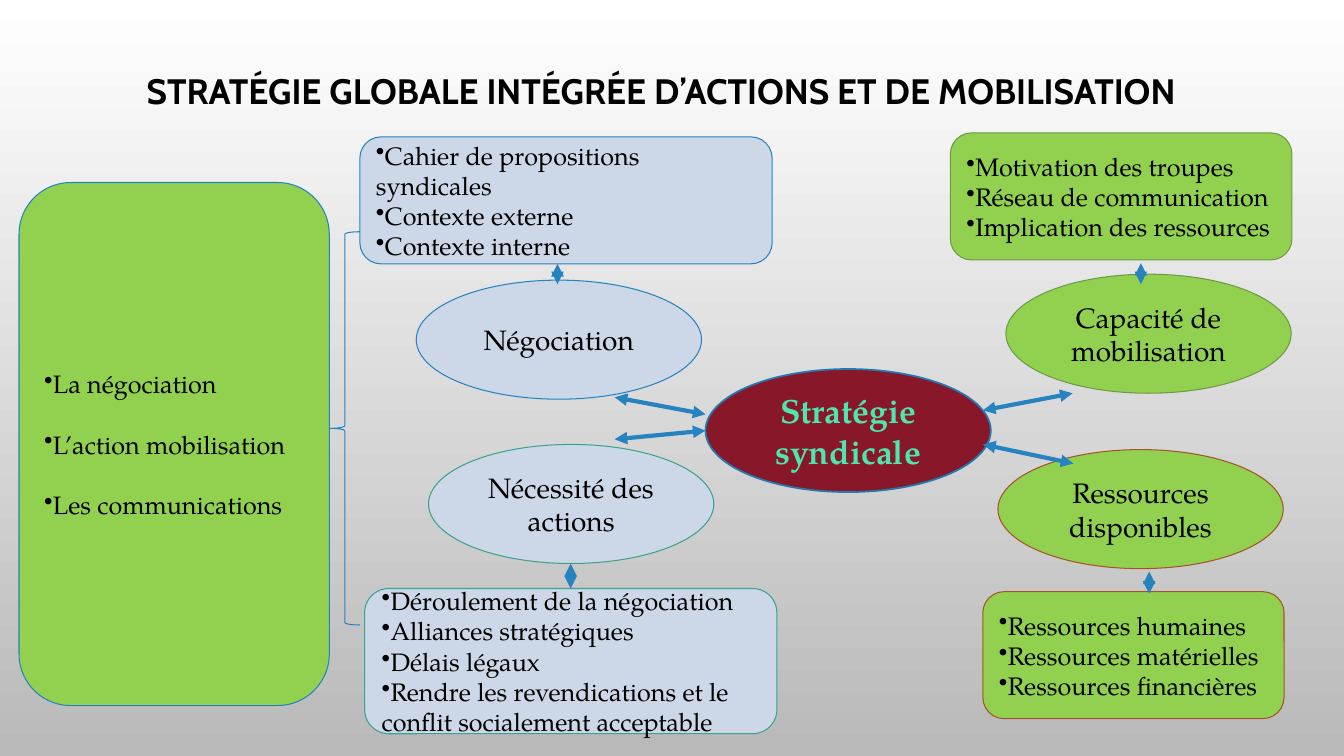
"""Build the slide on the integrated strategy of union action and mobilisation."""
import pptx
import pptx.util
import pptx.dml.color
import pptx.enum.shapes
import pptx.enum.text
import pptx.oxml
import pptx.oxml.ns
import lxml.etree

Cm = pptx.util.Cm
Pt = pptx.util.Pt
SHAPES = pptx.enum.shapes.MSO_SHAPE
ALIGN = pptx.enum.text.PP_ALIGN
MIDDLE = pptx.enum.text.MSO_ANCHOR.MIDDLE
SERIF = "TeX Gyre Pagella"
GREEN, PALE, CRIMSON, MINT = "92D050", "CCD8E7", "871729", "4DE6AD"
BLUE, DARK_BLUE, LEAF, TEAL, RUST = "2683BF", "2379B0", "6B9B46", "3CA28B", "A55229"


def colour(value):
    return pptx.dml.color.RGBColor.from_string(value)


def write(shape, lines, font, bulleted=False, gap=0):
    frame = shape.text_frame
    frame.word_wrap = True
    frame.vertical_anchor = MIDDLE
    for number, line in enumerate(lines):
        para = frame.add_paragraph() if number else frame.paragraphs[0]
        para.alignment = ALIGN.LEFT if bulleted else ALIGN.CENTER
        if number and gap:
            para.space_before = Pt(gap)
        if bulleted:
            bullet = lxml.etree.SubElement(
                para._p.get_or_add_pPr(), pptx.oxml.ns.qn("a:buChar"))
            bullet.set("char", "•")
        span = para.add_run()
        span.text = line
        span.font.color.rgb = colour(font.get("colour", "000000"))
        for name in ("name", "size", "bold"):
            setattr(span.font, name, font.get(name))


deck = pptx.Presentation()
deck.slide_width, deck.slide_height = Cm(33.87), Cm(19.05)
page = deck.slides.add_slide(deck.slide_layouts[6])
backdrop = page.background.fill
backdrop.gradient()
backdrop.gradient_angle = 270
for stop, shade in zip(backdrop.gradient_stops, ("FFFFFF", "B9B9B9")):
    stop.color.rgb = colour(shade)

title = page.shapes.add_textbox(Cm(2.06), Cm(1.14), Cm(29.21), Cm(2.39))
write(title, ["STRATÉGIE GLOBALE INTÉGRÉE D’ACTIONS ET DE MOBILISATION"],
      {"name": "Cabin", "size": Pt(25.2), "bold": True})
title.text_frame.paragraphs[0].line_spacing = 0.9

theme_font = {"name": SERIF, "size": Pt(20)}
core_font = {"name": SERIF, "size": Pt(24), "bold": True, "colour": MINT}
list_font = {"name": SERIF, "size": Pt(18)}

ellipses = [
    (17.78, 9.3, 3.1, CRIMSON, DARK_BLUE, 1.25, "Stratégie syndicale", core_font),
    (25.35, 6.91, 3, GREEN, LEAF, 0.75, "Capacité de mobilisation", theme_font),
    (10.8, 11.2, 3, PALE, TEAL, 0.75, "Nécessité des actions", theme_font),
    (25.15, 11.33, 3, GREEN, RUST, 0.75, "Ressources disponibles", theme_font),
    (10.49, 7.06, 3, PALE, BLUE, 0.75, "Négociation", theme_font),
]
for left, top, height, fill, outline, weight, label, font in ellipses:
    ellipse = page.shapes.add_shape(
        SHAPES.OVAL, Cm(left), Cm(top), Cm(7.19), Cm(height))
    ellipse.shadow.inherit = False
    ellipse.fill.solid()
    ellipse.fill.fore_color.rgb = colour(fill)
    ellipse.line.color.rgb = colour(outline)
    ellipse.line.width = Pt(weight)
    write(ellipse, [label], font)

boxes = [
    (23.95, 3.35, 8.61, 3.2, GREEN, LEAF, 0,
     ["Motivation des troupes", "Réseau de communication",
      "Implication des ressources"]),
    (9.19, 14.83, 10.39, 3.66, PALE, TEAL, 0,
     ["Déroulement de la négociation", "Alliances stratégiques", "Délais légaux",
      "Rendre les revendications et le conflit socialement acceptable"]),
    (24.77, 14.91, 7.59, 3.2, GREEN, RUST, 0,
     ["Ressources humaines", "Ressources matérielles", "Ressources financières"]),
    (9.07, 3.45, 10.39, 3.2, PALE, BLUE, 0,
     ["Cahier de propositions syndicales", "Contexte externe", "Contexte interne"]),
    (0.48, 4.6, 7.82, 13.18, GREEN, BLUE, 21.6,
     ["La négociation", "L’action mobilisation", "Les communications"]),
]
for left, top, width, height, fill, outline, gap, lines in boxes:
    box = page.shapes.add_shape(
        SHAPES.ROUNDED_RECTANGLE, Cm(left), Cm(top), Cm(width), Cm(height))
    box.shadow.inherit = False
    box.fill.solid()
    box.fill.fore_color.rgb = colour(fill)
    box.line.color.rgb = colour(outline)
    box.line.width = Pt(0.75)
    write(box, lines, list_font, bulleted=True, gap=gap)

brace = page.shapes.add_shape(
    SHAPES.LEFT_BRACE, Cm(8.31), Cm(5.84), Cm(0.76), Cm(9.91))
brace.shadow.inherit = False
brace.fill.background()
brace.line.color.rgb = colour(BLUE)
brace.line.width = Pt(0.75)

arrows = [
    (17.78, 10.85, 15.49, 11.07),
    (24.77, 11.2, 27.05, 11.68),
    (24.77, 10.34, 27.03, 9.91),
    (17.78, 10.44, 15.49, 10.01),
    (28.75, 6.63, 28.75, 7.16),
    (14.38, 14.2, 14.38, 14.83),
    (28.96, 14.96, 28.96, 14.4),
    (14.05, 6.65, 14.05, 7.16),
]
for ends in arrows:
    arrow = page.shapes.add_connector(
        pptx.enum.shapes.MSO_CONNECTOR.STRAIGHT, *map(Cm, ends))
    arrow.line.color.rgb = colour(BLUE)
    arrow.line.width = Pt(3)
    for tag in ("a:headEnd", "a:tailEnd"):
        tip = lxml.etree.SubElement(arrow.line._ln, pptx.oxml.ns.qn(tag))
        tip.set("type", "triangle")
    lxml.etree.SubElement(arrow._element.spPr, pptx.oxml.ns.qn("a:effectLst"))

deck.save("out.pptx")
